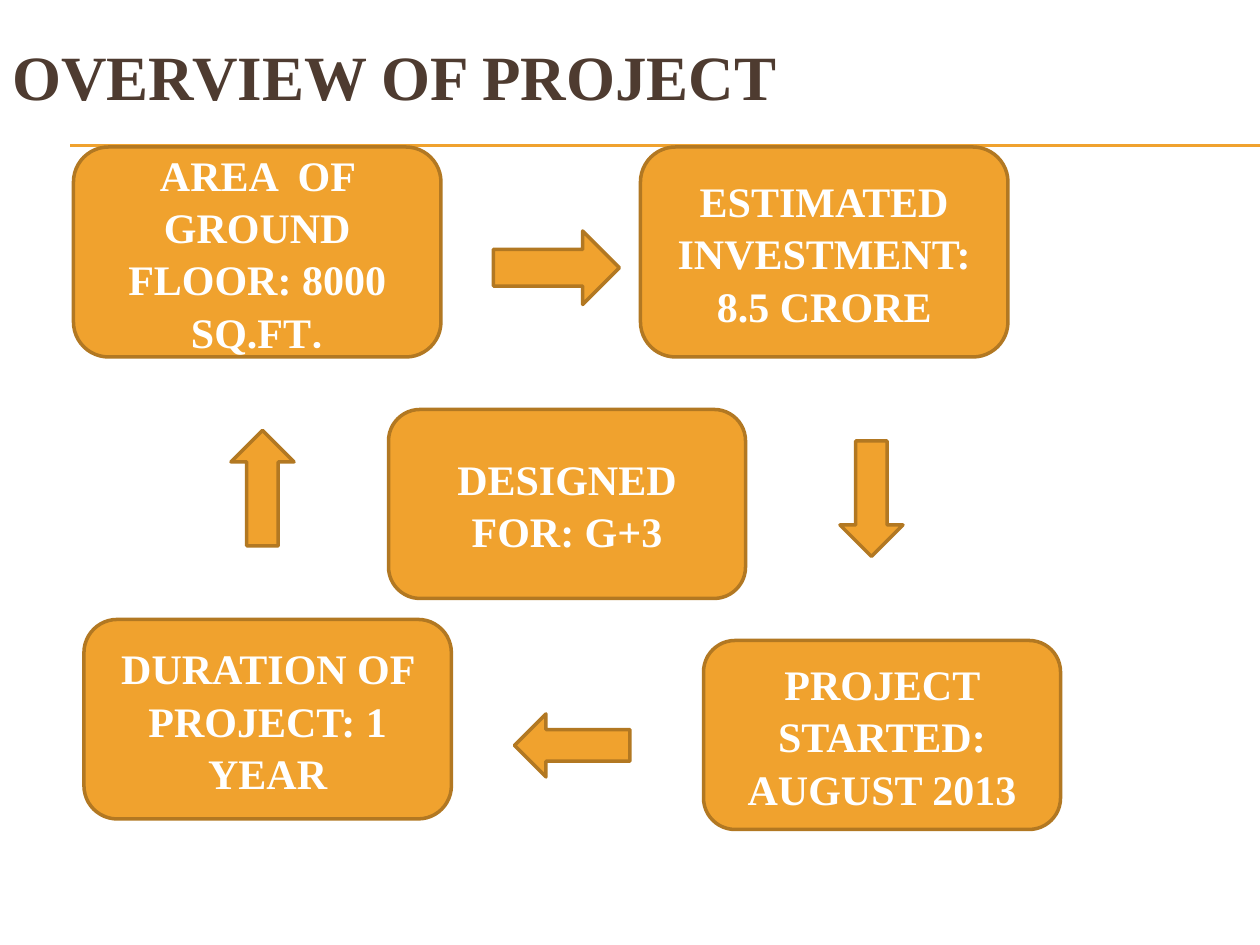
from dataclasses import dataclass

from lxml import etree
from pptx import Presentation
from pptx.dml.color import RGBColor
from pptx.enum.shapes import MSO_CONNECTOR, MSO_SHAPE
from pptx.enum.text import MSO_ANCHOR, PP_ALIGN
from pptx.oxml.ns import qn
from pptx.util import Inches, Length, Pt

BOX = MSO_SHAPE.FLOWCHART_ALTERNATE_PROCESS
RIGHT = MSO_SHAPE.RIGHT_ARROW
DOWN = MSO_SHAPE.DOWN_ARROW
LEFT = MSO_SHAPE.LEFT_ARROW
UP = MSO_SHAPE.UP_ARROW
LINE = MSO_CONNECTOR.STRAIGHT
MIDDLE = MSO_ANCHOR.MIDDLE
CENTER = PP_ALIGN.CENTER
START = PP_ALIGN.LEFT

COLS, ROWS = 120, 90
GOLD, EDGE, BROWN, WHITE = "F0A22E", "B27822", "4E3B30", "FFFFFF"
SERIF = {"name": "Times New Roman", "bold": True}
HEAD = {**SERIF, "size": Pt(36)}
BODY = {**SERIF, "size": Pt(24)}
STOP = {**BODY, "name": "Roboto"}


@dataclass
class Node:
    kind: int
    col: int
    row: int
    wide: int
    high: int
    text: str = ""
    tail: str = ""


NODES = [
    Node(BOX, 61, 14, 35, 20, "ESTIMATED INVESTMENT: 8.5 CRORE"),
    Node(BOX, 7, 14, 35, 20, "AREA  OF GROUND FLOOR: 8000 SQ.FT", "."),
    Node(BOX, 8, 59, 35, 19, "DURATION OF PROJECT: 1 YEAR"),
    Node(BOX, 67, 61, 34, 18, "PROJECT STARTED: AUGUST 2013"),
    Node(BOX, 37, 39, 34, 18, "DESIGNED FOR: G+3"),
    Node(RIGHT, 47, 22, 12, 7),
    Node(DOWN, 80, 42, 6, 11),
    Node(LEFT, 49, 68, 11, 6),
    Node(UP, 22, 41, 6, 11),
]

deck = Presentation()
deck.slide_width, deck.slide_height = Inches(10), Inches(7.5)
slide = deck.slides.add_slide(deck.slide_layouts[6])


def tint(code: str) -> RGBColor:
    return RGBColor.from_string(code)


def across(col: float) -> Length:
    return Length(round(deck.slide_width * col / COLS))


def below(row: float) -> Length:
    return Length(round(deck.slide_height * row / ROWS))


def write(shape, parts: list, code: str, align: int) -> None:
    frame = shape.text_frame
    for key, value in {"word_wrap": True, "vertical_anchor": MIDDLE}.items():
        setattr(frame, key, value)
    para = frame.paragraphs[0]
    para.alignment = align
    para.line_spacing = 1.04
    for text, style in parts:
        run = para.add_run()
        run.text = text
        for key, value in style.items():
            setattr(run.font, key, value)
        run.font.color.rgb = tint(code)


def draw_rule(col: float, row: float) -> None:
    rule = slide.shapes.add_connector(
        LINE, across(col), below(row), across(COLS), below(row)
    )
    rule.line.color.rgb = tint(GOLD)
    rule.line.width = Pt(0.75)
    etree.SubElement(rule._element.spPr, qn("a:effectLst"))


def draw_title(text: str) -> None:
    box = slide.shapes.add_textbox(0, 0, across(COLS), below(14))
    write(box, [(text, HEAD)], BROWN, START)


def draw_node(node: Node) -> None:
    shape = slide.shapes.add_shape(
        node.kind, across(node.col), below(node.row),
        across(node.wide), below(node.high)
    )
    shape.shadow.inherit = False
    shape.fill.solid()
    shape.fill.fore_color.rgb = tint(GOLD)
    shape.line.color.rgb = tint(EDGE)
    shape.line.width = Pt(2)
    parts = [(node.text, BODY), (node.tail, STOP)]
    if node.text:
        write(shape, [part for part in parts if part[0]], WHITE, CENTER)


def main() -> None:
    for row in (13.8, 13.9):
        draw_rule(6.7, row)
    draw_title("OVERVIEW OF PROJECT")
    for node in NODES:
        draw_node(node)
    deck.save("out.pptx")


if __name__ == "__main__":
    main()
